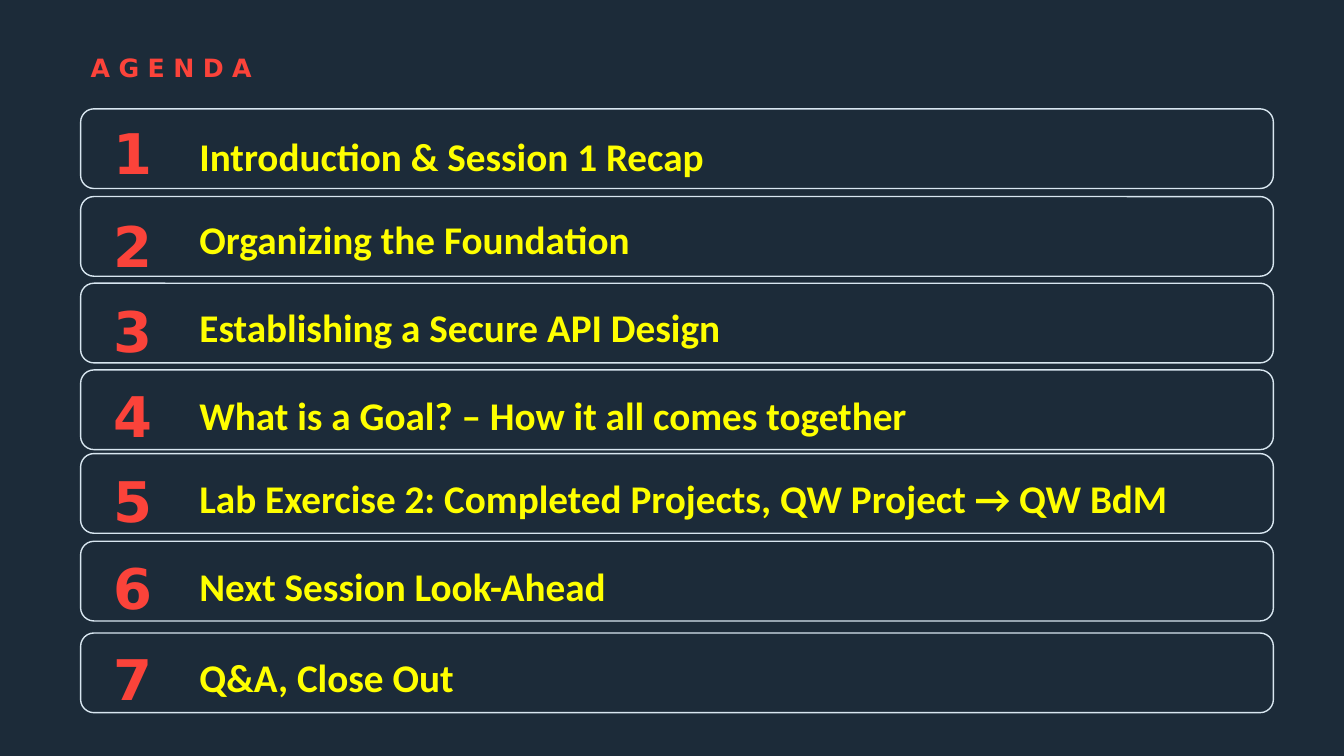
from dataclasses import dataclass

from pptx import Presentation
from pptx.dml.color import RGBColor
from pptx.enum.shapes import MSO_SHAPE
from pptx.enum.text import MSO_ANCHOR, MSO_AUTO_SIZE, PP_ALIGN
from pptx.util import Emu, Pt

ROUNDED = MSO_SHAPE.ROUNDED_RECTANGLE
MIDDLE = MSO_ANCHOR.MIDDLE
GROW = MSO_AUTO_SIZE.SHAPE_TO_FIT_TEXT
LEFT = PP_ALIGN.LEFT

EMU_PER_PX = 9144  # 100 px to the inch
NAVY, RED, YELLOW, PALE = "1C2B39", "FB433A", "FFFF00", "D8E6F0"
HEAD_FONT, BODY_FONT = "DejaVu Sans", "Calibri"
MARGIN = 80
ROW_W, ROW_H = 1183, 79


@dataclass
class AgendaItem:
    text: str
    top: int
    number_top: int
    label_top: int
    label_width: int


ITEMS = [
    AgendaItem("Introduction & Session 1 Recap", 108, 113, 126, 613),
    AgendaItem("Organizing the Foundation", 195, 205, 209, 612),
    AgendaItem("Establishing a Secure API Design", 281, 289, 296, 856),
    AgendaItem("What is a Goal? – How it all comes together", 367, 374, 383, 873),
    AgendaItem("Lab Exercise 2: Completed Projects, QW Project → QW BdM",
               450, 458, 466, 1024),
    AgendaItem("Next Session Look-Ahead", 537, 544, 553, 653),
    AgendaItem("Q&A, Close Out", 628, 635, 643, 653),
]


def px(n: int) -> Emu:
    return Emu(n * EMU_PER_PX)


def rgb(color: str) -> RGBColor:
    return RGBColor.from_string(color)


def style(p, font: str, size: int, color: str) -> None:
    p.font.name = font
    p.font.size = Pt(size)
    p.font.bold = True
    p.font.color.rgb = rgb(color)


def add_title(slide, text: str) -> None:
    sp = slide.shapes.title
    sp.left, sp.top, sp.width, sp.height = px(MARGIN), px(46), px(980), px(46)
    tf = sp.text_frame
    tf.vertical_anchor = MIDDLE
    p = tf.paragraphs[0]
    p.alignment = LEFT
    p.line_spacing = 0.9
    r = p.add_run()
    r.text = text
    r._r.get_or_add_rPr().set("spc", "600")  # letter spacing of 6 pt
    style(p, HEAD_FONT, 18, RED)


def add_text(slide, text: str, x: int, y: int, w: int, h: int,
             font: str, size: int, color: str) -> None:
    tf = slide.shapes.add_textbox(px(x), px(y), px(w), px(h)).text_frame
    tf.word_wrap = True
    tf.auto_size = GROW
    p = tf.paragraphs[0]
    p.text = text
    style(p, font, size, color)


def add_row(slide, number: int, item: AgendaItem) -> None:
    sp = slide.shapes.add_shape(ROUNDED, px(MARGIN), px(item.top),
                                px(ROW_W), px(ROW_H))
    sp.shadow.inherit = False
    sp.fill.background()
    sp.line.color.rgb = rgb(PALE)
    sp.line.width = Pt(1)
    add_text(slide, str(number), 103, item.number_top, 61, 63,
             HEAD_FONT, 40, RED)
    add_text(slide, item.text, 188, item.label_top, item.label_width, 57,
             BODY_FONT, 28, YELLOW)


def main() -> None:
    prs = Presentation()
    prs.slide_width, prs.slide_height = px(1333), px(750)
    slide = prs.slides.add_slide(prs.slide_layouts[5])

    # Background and heading
    fill = slide.background.fill
    fill.solid()
    fill.fore_color.rgb = rgb(NAVY)
    add_title(slide, "AGENDA")

    # Agenda rows
    for number, item in enumerate(ITEMS, start=1):
        add_row(slide, number, item)

    prs.save("out.pptx")


if __name__ == "__main__":
    main()
